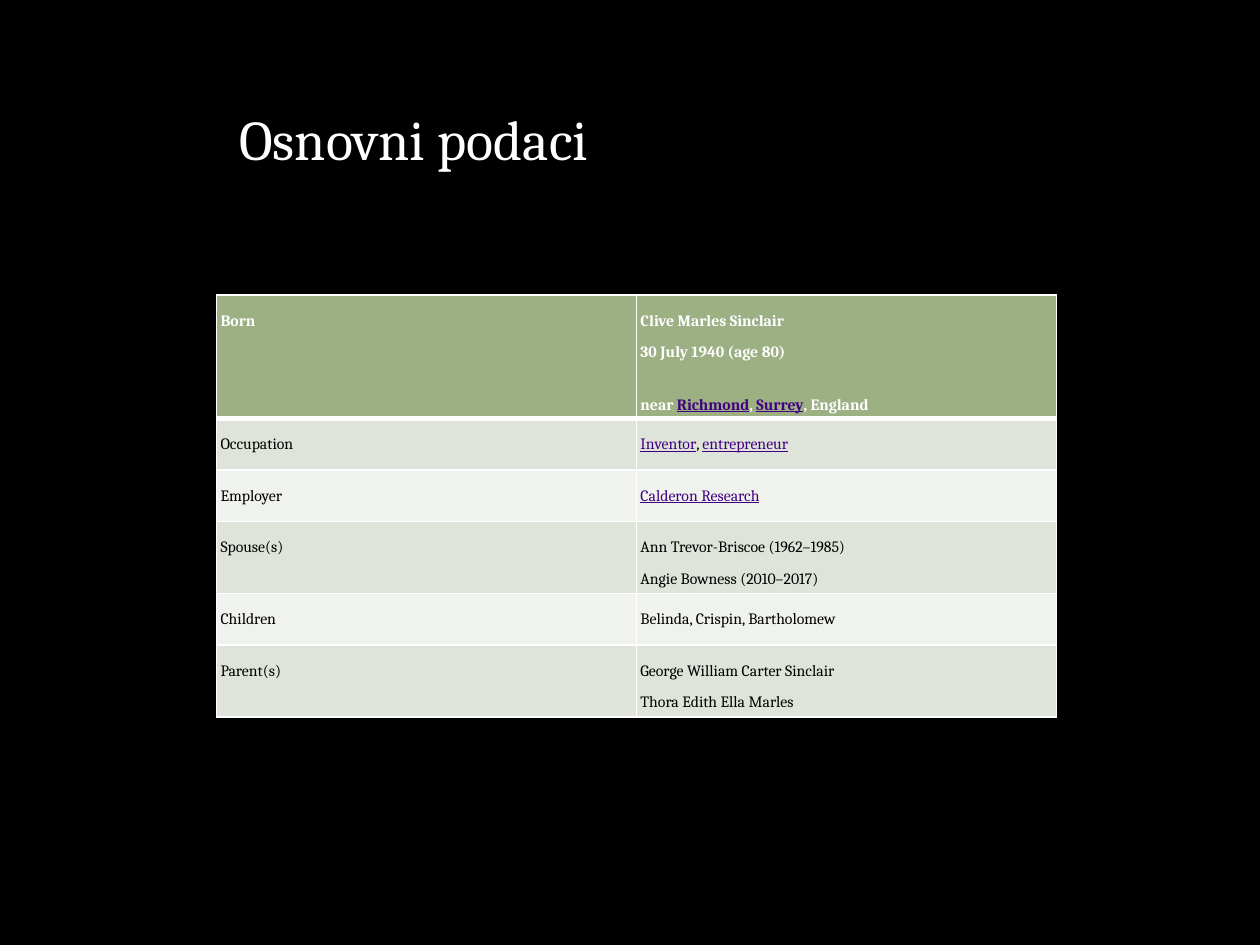
from dataclasses import dataclass

from lxml.etree import SubElement
from pptx import Presentation
from pptx.dml.color import RGBColor
from pptx.enum.text import MSO_ANCHOR, PP_ALIGN
from pptx.oxml.ns import qn
from pptx.util import Inches, Pt


@dataclass(frozen=True)
class Theme:
    font: str = "Cambria"
    title_size: int = 32
    body_size: int = 9
    background: str = "000000"
    light: str = "FFFFFF"
    dark: str = "000000"
    link: str = "410082"
    header: str = "9CB084"
    bands: tuple = ("EFF2ED", "DEE4D9")


theme = Theme()


def write_text(paragraph, text, *, size, color, bold=False, line_spacing=None,
               space_before=0, space_after=0):
    """Write text; parts between bars are underlined in the link colour."""
    paragraph.alignment = PP_ALIGN.LEFT
    paragraph.space_before = Pt(space_before)
    paragraph.space_after = Pt(space_after)
    if line_spacing:
        paragraph.line_spacing = Pt(line_spacing)
    for line_number, line in enumerate(text.split("\n")):
        if line_number:
            paragraph.add_line_break()
        for part_number, part in enumerate(line.split("|")):
            if not part:
                continue
            linked = part_number % 2 == 1
            run = paragraph.add_run()
            run.text = part
            run.font.name = theme.font
            run.font.size = Pt(size)
            run.font.bold = bold
            run.font.underline = linked
            run.font.color.rgb = RGBColor.from_string(theme.link if linked else color)


def set_borders(cell, color, bottom_width):
    """Draw the four cell borders, which must precede the cell fill in the XML."""
    properties = cell._tc.get_or_add_tcPr()
    for side, width in (("L", 1), ("R", 1), ("T", 1), ("B", bottom_width)):
        line = SubElement(properties, qn(f"a:ln{side}"), w=str(Pt(width)))
        fill = SubElement(line, qn("a:solidFill"))
        SubElement(fill, qn("a:srgbClr"), val=color)


presentation = Presentation()
presentation.slide_width = Inches(10)
presentation.slide_height = Inches(7.5)
slide = presentation.slides.add_slide(presentation.slide_layouts[5])
slide.background.fill.solid()
slide.background.fill.fore_color.rgb = RGBColor.from_string(theme.background)

# Title
title = slide.shapes.title
title.left, title.top = Inches(1.8), Inches(0.78)
title.width, title.height = Inches(7.42), Inches(0.64)
title.text_frame.vertical_anchor = MSO_ANCHOR.TOP
title.text_frame.word_wrap = True
write_text(title.text_frame.paragraphs[0], "Osnovni podaci",
           size=theme.title_size, color=theme.light)

# Table content: label, paragraphs of the value, row height in inches
facts = [
    ("Born", ["Clive Marles Sinclair\n30 July 1940 (age 80)",
              "near |Richmond|, |Surrey|, England"], 0.98),
    ("Occupation", ["|Inventor|, |entrepreneur|"], 0.41),
    ("Employer", ["|Calderon Research|"], 0.41),
    ("Spouse(s)", ["Ann Trevor-Briscoe (1962–1985)\nAngie Bowness (2010–2017)"], 0.57),
    ("Children", ["Belinda, Crispin, Bartholomew"], 0.41),
    ("Parent(s)", ["George William Carter Sinclair\nThora Edith Ella Marles"], 0.57),
]

# Table grid
column_width = Inches(10 / 3)
table = slide.shapes.add_table(
    len(facts), 2, Inches(1.72), Inches(2.34), 2 * column_width,
    Inches(sum(height for _, _, height in facts))).table
for column in table.columns:
    column.width = column_width

# Table cells
for row_number, (label, values, height) in enumerate(facts):
    table.rows[row_number].height = Inches(height)
    is_header = row_number == 0
    fill_color = theme.header if is_header else theme.bands[row_number % 2]
    for column_number, paragraphs in enumerate(([label], values)):
        cell = table.cell(row_number, column_number)
        cell.margin_left = cell.margin_right = Inches(0.03)
        cell.margin_top = cell.margin_bottom = Inches(0.03)
        set_borders(cell, theme.light, 3 if is_header else 1)
        cell.fill.solid()
        cell.fill.fore_color.rgb = RGBColor.from_string(fill_color)
        frame = cell.text_frame
        for number, text in enumerate(paragraphs):
            paragraph = frame.add_paragraph() if number else frame.paragraphs[0]
            write_text(paragraph, text, size=theme.body_size, bold=is_header,
                       color=theme.light if is_header else theme.dark,
                       line_spacing=18, space_before=6 if number else 0, space_after=6)

# The top border of the first body row matches the header's heavy rule
for cell in table.rows[1].cells:
    cell._tc.tcPr.find(qn("a:lnT")).set("w", str(Pt(3)))

presentation.save("out.pptx")
